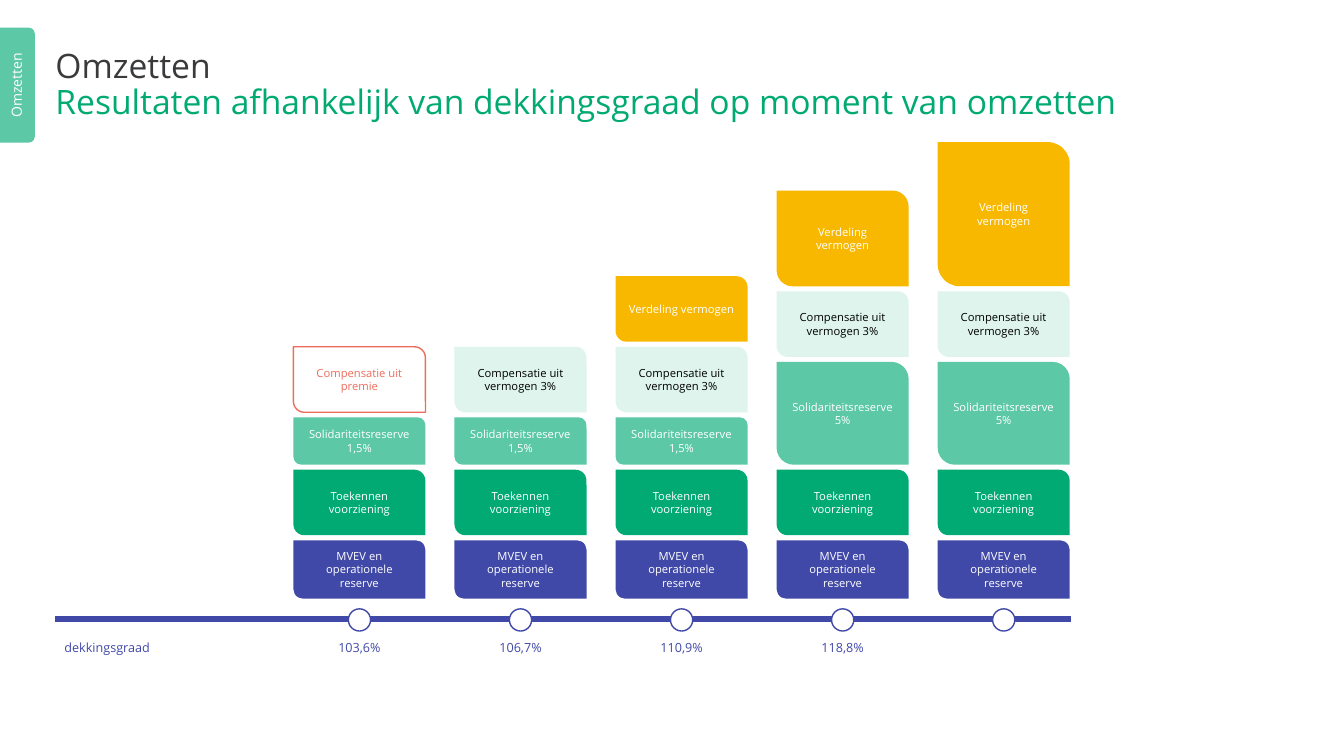
from dataclasses import dataclass

from lxml import etree
from pptx import Presentation
from pptx.dml.color import RGBColor
from pptx.enum.shapes import MSO_CONNECTOR, MSO_SHAPE as Shape
from pptx.enum.text import MSO_ANCHOR as Anchor, PP_ALIGN as Align
from pptx.oxml.ns import qn
from pptx.util import Inches, Pt


@dataclass(frozen=True)
class Theme:
    font: str = "Open Sans"
    ink: str = "393A3C"
    black: str = "000000"
    white: str = "FFFFFF"
    green: str = "00AA72"
    mint: str = "5CC8A5"
    pale: str = "DEF4ED"
    blue: str = "4149A8"
    yellow: str = "F8B800"
    coral: str = "ED6D5C"
    title_size: float = 24
    tab_size: float = 10
    axis_size: float = 9
    block_size: float = 8


THEME = Theme()

BLOCK_WIDTH = 1.31
BLOCK_GAP = 0.05
STACK_BOTTOM = 5.94
FIRST_LEFT, LAST_LEFT = 2.91, 9.3
AXIS_LEFT, AXIS_RIGHT, AXIS_Y = 0.55, 10.62, 6.14
MARKER_SIZE = 0.22
LABEL_TOP, LABEL_WIDTH, LABEL_HEIGHT = 6.3, 1.16, 0.25

# Each block: text, height, fill, text colour, outline
RESERVE = ("MVEV en operationele reserve", 0.58, THEME.blue, THEME.white, None)
PROVISION = ("Toekennen voorziening", 0.65, THEME.green, THEME.white, None)
SOLIDARITY_LOW = ("Solidariteitsreserve 1,5%", 0.47, THEME.mint, THEME.white, None)
SOLIDARITY_HIGH = ("Solidariteitsreserve 5%", 1.02, THEME.mint, THEME.white, None)
FROM_PREMIUM = ("Compensatie uit premie", 0.65, THEME.white, THEME.coral, THEME.coral)
FROM_ASSETS = ("Compensatie uit vermogen 3%", 0.65, THEME.pale, THEME.black, None)


def distribution(height):
    return ("Verdeling vermogen", height, THEME.yellow, THEME.white, None)


# Each column: funding ratio, then the blocks above the shared base
COLUMNS = [
    ("103,6%", [SOLIDARITY_LOW, FROM_PREMIUM]),
    ("106,7%", [SOLIDARITY_LOW, FROM_ASSETS]),
    ("110,9%", [SOLIDARITY_LOW, FROM_ASSETS, distribution(0.65)]),
    ("118,8%", [SOLIDARITY_HIGH, FROM_ASSETS, distribution(0.95)]),
    (None, [SOLIDARITY_HIGH, FROM_ASSETS, distribution(1.43)]),
]


class SlidePainter:
    def __init__(self, page, theme):
        self.page = page
        self.theme = theme

    def shape(self, kind, left, top, width, height, fill, outline=None):
        shape = self.page.shapes.add_shape(
            kind, Inches(left), Inches(top), Inches(width), Inches(height))
        shape.shadow.inherit = False
        shape.fill.solid()
        shape.fill.fore_color.rgb = RGBColor.from_string(fill)
        if outline:
            shape.line.color.rgb = RGBColor.from_string(outline)
            shape.line.width = Pt(1)
        else:
            shape.line.fill.background()
        return shape

    def style(self, para, size, color, align):
        para.alignment = align
        para.font.name = self.theme.font
        para.font.size = Pt(size)
        para.font.color.rgb = RGBColor.from_string(color)

    def text(self, text, left, top, width, height, size, color,
             align=Align.CENTER, margins=(0.1, 0.05)):
        """Add a text box; margins are (left and right, top and bottom)."""
        box = self.page.shapes.add_textbox(
            Inches(left), Inches(top), Inches(width), Inches(height))
        frame = box.text_frame
        frame.word_wrap = True
        frame.margin_left = frame.margin_right = Inches(margins[0])
        frame.margin_top = frame.margin_bottom = Inches(margins[1])
        para = frame.paragraphs[0]
        para.text = text
        self.style(para, size, color, align)
        return box

    def title(self, heading, subheading):
        box = self.text(heading, 0.55, 0.28, 12.23, 1.14, self.theme.title_size,
                        self.theme.ink, Align.LEFT, (0, 0))
        box.text_frame.vertical_anchor = Anchor.MIDDLE
        para = box.text_frame.paragraphs[0]
        para.line_spacing = 0.9
        para.add_line_break()
        span = para.add_run()
        span.text = subheading
        span.font.color.rgb = RGBColor.from_string(self.theme.green)

    def block(self, left, top, text, height, fill, color, outline):
        """Add a block rounded at its top right and bottom left."""
        shape = self.shape(Shape.ROUND_2_DIAG_RECTANGLE, left, top,
                           BLOCK_WIDTH, height, fill, outline)
        shape.adjustments[0] = 0
        shape.adjustments[1] = 0.16667
        frame = shape.text_frame
        frame.word_wrap = True
        frame.vertical_anchor = Anchor.MIDDLE
        para = frame.paragraphs[0]
        para.text = text
        self.style(para, self.theme.block_size, color, Align.CENTER)

    def stack(self, left, blocks):
        """Pile blocks upwards from the common bottom."""
        bottom = STACK_BOTTOM
        for text, height, *colors in blocks:
            self.block(left, bottom - height, text, height, *colors)
            bottom -= height + BLOCK_GAP

    def axis(self):
        line = self.page.shapes.add_connector(
            MSO_CONNECTOR.STRAIGHT, Inches(AXIS_LEFT), Inches(AXIS_Y),
            Inches(AXIS_RIGHT), Inches(AXIS_Y))
        line.line.color.rgb = RGBColor.from_string(self.theme.blue)
        line.line.width = Pt(4.5)
        etree.SubElement(line._element.spPr, qn("a:effectLst"))
        self.text("dekkingsgraad", 0.54, LABEL_TOP, 1.48, LABEL_HEIGHT,
                  self.theme.axis_size, self.theme.blue, Align.LEFT)

    def marker(self, center, label):
        self.shape(Shape.OVAL, center - MARKER_SIZE / 2, 6.04, MARKER_SIZE,
                   MARKER_SIZE, self.theme.white, self.theme.blue)
        if label:
            self.text(label, center - LABEL_WIDTH / 2, LABEL_TOP, LABEL_WIDTH,
                      LABEL_HEIGHT, self.theme.axis_size, self.theme.blue)

    def side_tab(self, text):
        place = (-0.4, 0.67, 1.14, 0.35)
        tab = self.shape(Shape.ROUND_2_SAME_RECTANGLE, *place, self.theme.mint)
        tab.rotation = 90
        label = self.text(text, *place, self.theme.tab_size, self.theme.white,
                          margins=(0.2, 0.09))
        label.rotation = 270


def main():
    deck = Presentation()
    deck.slide_width, deck.slide_height = Inches(13.33), Inches(7.5)
    page = deck.slides.add_slide(deck.slide_layouts[6])
    painter = SlidePainter(page, THEME)

    painter.title("Omzetten",
                  "Resultaten afhankelijk van dekkingsgraad op moment van omzetten")
    painter.axis()
    pitch = (LAST_LEFT - FIRST_LEFT) / (len(COLUMNS) - 1)
    for index, (ratio, blocks) in enumerate(COLUMNS):
        left = FIRST_LEFT + index * pitch
        painter.stack(left, [RESERVE, PROVISION, *blocks])
        painter.marker(left + BLOCK_WIDTH / 2, ratio)
    painter.side_tab("Omzetten")

    deck.save("out.pptx")


if __name__ == "__main__":
    main()
